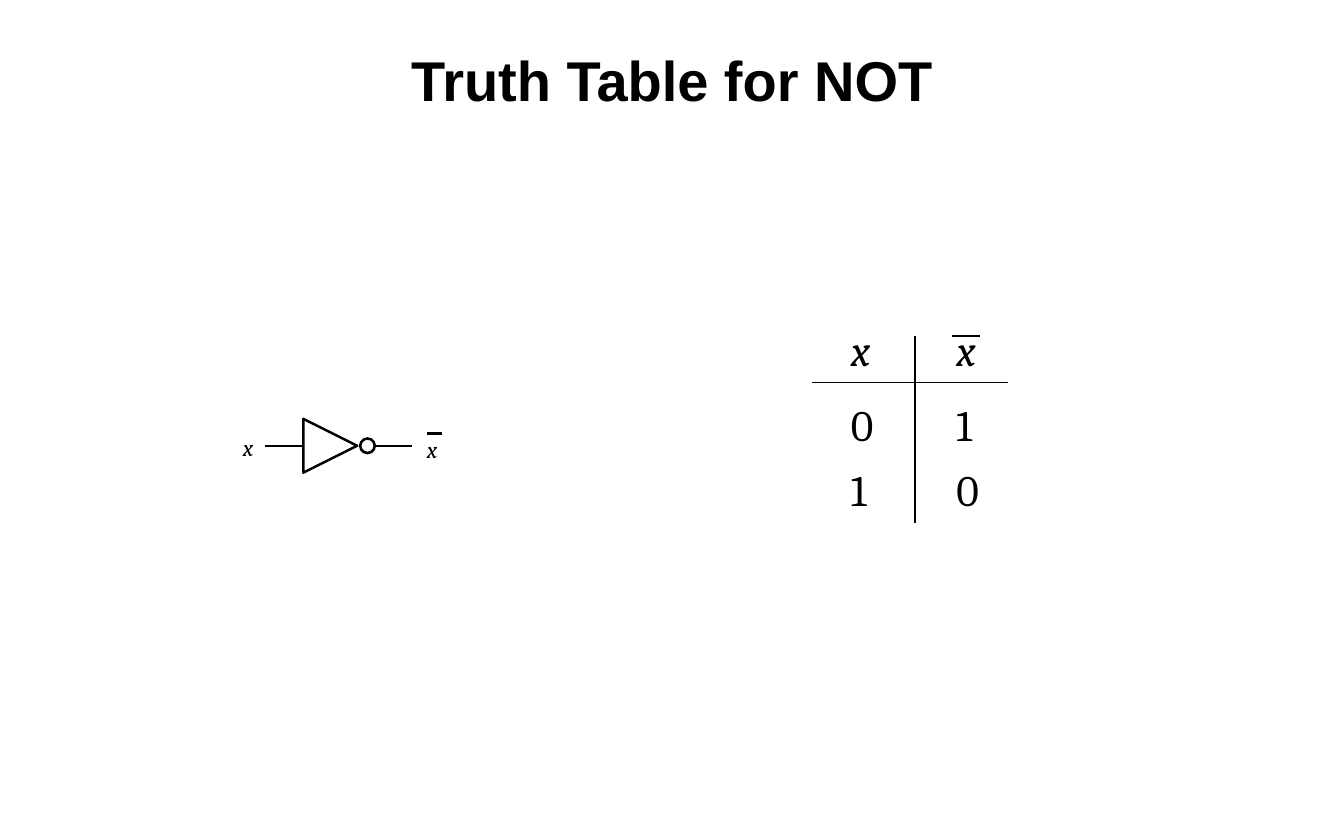
from dataclasses import dataclass

from lxml import etree
from pptx import Presentation
from pptx.dml.color import RGBColor
from pptx.enum.shapes import MSO_CONNECTOR, MSO_SHAPE
from pptx.enum.text import MSO_ANCHOR, MSO_AUTO_SIZE, PP_ALIGN
from pptx.oxml.ns import qn
from pptx.util import Cm, Pt

STRAIGHT = MSO_CONNECTOR.STRAIGHT
OVAL = MSO_SHAPE.OVAL
MIDDLE = MSO_ANCHOR.MIDDLE
FIT_SHAPE = MSO_AUTO_SIZE.SHAPE_TO_FIT_TEXT
NO_FIT = MSO_AUTO_SIZE.NONE
CENTER = PP_ALIGN.CENTER
TITLE_ONLY = 5


@dataclass(frozen=True)
class Theme:
    ink: RGBColor = RGBColor(0, 0, 0)
    title_font: str = "Arial"
    math_font: str = "Cambria"
    title_size: Pt = Pt(36)
    table_size: Pt = Pt(28)
    gate_size: Pt = Pt(15)
    rule_width: Pt = Pt(0.75)
    overbar_width: Pt = Pt(1.25)
    gate_width: Pt = Pt(1.63)


THEME = Theme()


def style_font(font, name, size, bold=False, italic=False):
    font.name = name
    font.size = size
    font.bold = bold
    font.italic = italic
    font.color.rgb = THEME.ink


def set_title(slide, text):
    title = slide.shapes.title
    title.left, title.top = Cm(2.54), Cm(0.84)
    title.width, title.height = Cm(25.4), Cm(1.9)
    frame = title.text_frame
    frame.text = text
    frame.auto_size = NO_FIT
    frame.vertical_anchor = MIDDLE
    paragraph = frame.paragraphs[0]
    paragraph.alignment = CENTER
    style_font(paragraph.font, THEME.title_font, THEME.title_size, bold=True)


def add_symbol(slide, text, left, top, width, height, size, inset=True):
    box = slide.shapes.add_textbox(Cm(left), Cm(top), Cm(width), Cm(height))
    frame = box.text_frame
    frame.word_wrap = False
    frame.auto_size = FIT_SHAPE
    if not inset:
        frame.margin_left = frame.margin_right = 0
        frame.margin_top = frame.margin_bottom = 0
    frame.text = text
    style_font(frame.paragraphs[0].font, THEME.math_font, size,
               italic=text.isalpha())


def add_line(slide, start, end, width):
    x1, y1 = start
    x2, y2 = end
    line = slide.shapes.add_connector(STRAIGHT, Cm(x1), Cm(y1), Cm(x2), Cm(y2))
    line.line.color.rgb = THEME.ink
    line.line.width = width
    etree.SubElement(line._element.spPr, qn("a:effectLst"))


def outline_only(shape):
    shape.shadow.inherit = False
    shape.fill.background()
    shape.line.color.rgb = THEME.ink
    shape.line.width = THEME.gate_width


def add_truth_table(slide):
    columns = (19.05, 21.44)
    rows = (7.19, 8.9, 10.38)
    values = (("x", "x"), ("0", "1"), ("1", "0"))
    add_line(slide, (20.75, 7.62), (20.75, 11.86), THEME.rule_width)
    add_line(slide, (18.42, 8.68), (22.86, 8.68), THEME.rule_width)
    for top, row in zip(rows, values):
        for left, value in zip(columns, row):
            add_symbol(slide, value, left, top, 1, 1.45, THEME.table_size)
    add_line(slide, (21.59, 7.62), (22.23, 7.62), THEME.overbar_width)


def add_not_gate(slide):
    axis = 10.11
    for start, end in ((6.02, 6.88), (8.51, 9.35)):
        add_line(slide, (start, axis), (end, axis), THEME.gate_width)

    base, apex, half_height = 6.88, 8.1, 0.61
    builder = slide.shapes.build_freeform(Cm(apex), Cm(axis))
    builder.add_line_segments([(Cm(base), Cm(axis + half_height)),
                               (Cm(base), Cm(axis - half_height))], close=True)
    outline_only(builder.convert_to_shape())

    diameter = 0.33
    bubble = slide.shapes.add_shape(OVAL, Cm(8.17), Cm(axis - diameter / 2),
                                    Cm(diameter), Cm(diameter))
    outline_only(bubble)

    for left, top in ((5.51, 9.83), (9.68, 9.88)):
        add_symbol(slide, "x", left, top, 0.4, 0.64, THEME.gate_size, inset=False)
    add_line(slide, (9.68, 9.83), (10.03, 9.83), THEME.gate_width)


def main():
    presentation = Presentation()
    presentation.slide_width = Cm(30.48)
    presentation.slide_height = Cm(19.05)
    slide = presentation.slides.add_slide(presentation.slide_layouts[TITLE_ONLY])
    set_title(slide, "Truth Table for NOT")
    add_truth_table(slide)
    add_not_gate(slide)
    presentation.save("out.pptx")


if __name__ == "__main__":
    main()
